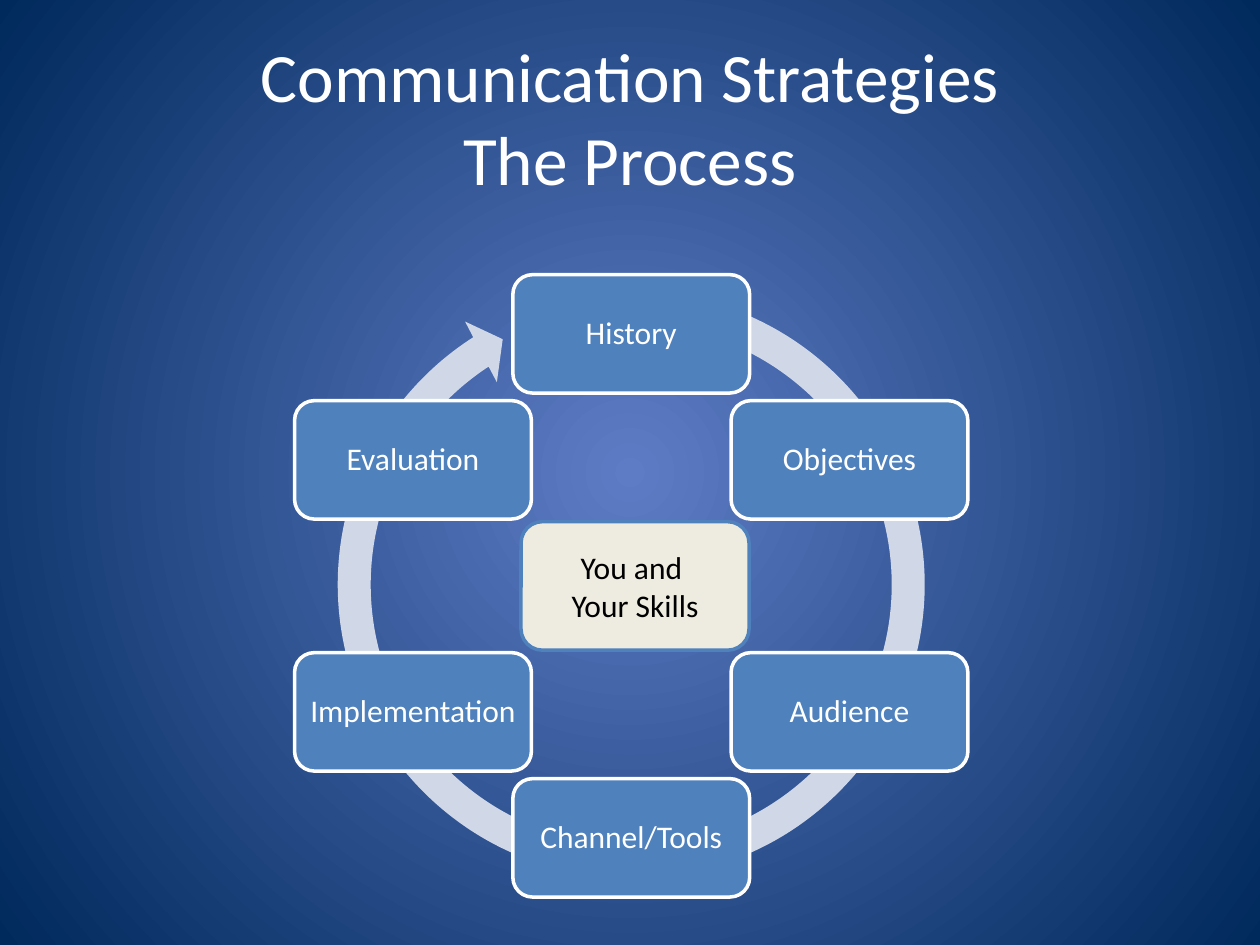
"""Build a slide showing the communication process as a six-step cycle."""
from dataclasses import dataclass
from math import cos, radians, sin
from typing import Optional

from lxml.etree import SubElement
from pptx import Presentation
from pptx.dml.color import RGBColor
from pptx.enum.shapes import MSO_SHAPE
from pptx.enum.text import MSO_ANCHOR, PP_ALIGN
from pptx.oxml.ns import qn
from pptx.slide import Slide
from pptx.text.text import TextFrame
from pptx.util import Inches, Pt

WHITE = RGBColor(0xFF, 0xFF, 0xFF)
BLACK = RGBColor(0x00, 0x00, 0x00)
BLUE = RGBColor(0x4F, 0x81, 0xBD)
CREAM = RGBColor(0xEE, 0xEC, 0xE1)
PALE_BLUE = RGBColor(0xD0, 0xD8, 0xE8)
GLOW = RGBColor(0x5E, 0x7C, 0xC5)
NAVY = RGBColor(0x00, 0x29, 0x5C)

CENTER_X, CENTER_Y = 5.01, 4.65
ORBIT = 2.0
RING_SIZE = 4.94
RING_ADJUSTMENTS = (0.053, 3.126, 142.288, 171.266, 0.055)
STEPS = ("History", "Objectives", "Audience", "Channel/Tools", "Implementation", "Evaluation")


@dataclass(frozen=True)
class Card:
    text: str
    x: float
    y: float
    width: float = 1.88
    height: float = 0.94
    fill: RGBColor = BLUE
    outline: RGBColor = WHITE
    color: RGBColor = WHITE
    inset: Optional[float] = 0.07
    spacing: Optional[float] = 0.9


def write_text(frame: TextFrame, text: str, *, size: float, color: RGBColor,
               inset: Optional[float] = None, spacing: Optional[float] = None) -> None:
    frame.text = text
    frame.word_wrap = True
    frame.vertical_anchor = MSO_ANCHOR.MIDDLE
    if inset is not None:
        frame.margin_left = frame.margin_right = Inches(inset)
        frame.margin_top = frame.margin_bottom = Inches(inset)
    for paragraph in frame.paragraphs:
        paragraph.alignment = PP_ALIGN.CENTER
        paragraph.line_spacing = spacing
        for run in paragraph.runs:
            run.font.name = "Calibri"
            run.font.size = Pt(size)
            run.font.color.rgb = color


def paint_background(slide: Slide) -> None:
    fill = slide.background.fill
    fill.gradient()
    for stop, color in zip(fill.gradient_stops, (GLOW, NAVY)):
        stop.color.rgb = color
    gradient = slide.element.find(f".//{qn('a:gradFill')}")
    gradient.remove(gradient.find(qn("a:lin")))
    circle = SubElement(gradient, qn("a:path"), {"path": "circle"})
    SubElement(circle, qn("a:fillToRect"), dict.fromkeys("ltrb", "50000"))


def add_ring(slide: Slide) -> None:
    ring = slide.shapes.add_shape(
        MSO_SHAPE.CIRCULAR_ARROW,
        Inches(CENTER_X - RING_SIZE / 2), Inches(CENTER_Y - 0.01 - RING_SIZE / 2),
        Inches(RING_SIZE), Inches(RING_SIZE))
    for index, value in enumerate(RING_ADJUSTMENTS):
        ring.adjustments[index] = value
    ring.shadow.inherit = False
    ring.fill.solid()
    ring.fill.fore_color.rgb = PALE_BLUE
    ring.line.fill.background()


def add_card(slide: Slide, card: Card) -> None:
    box = slide.shapes.add_shape(
        MSO_SHAPE.ROUNDED_RECTANGLE,
        Inches(card.x - card.width / 2), Inches(card.y - card.height / 2),
        Inches(card.width), Inches(card.height))
    box.shadow.inherit = False
    box.fill.solid()
    box.fill.fore_color.rgb = card.fill
    box.line.color.rgb = card.outline
    box.line.width = Pt(2)
    write_text(box.text_frame, card.text, size=18, color=card.color,
               inset=card.inset, spacing=card.spacing)


def main() -> None:
    presentation = Presentation()
    presentation.slide_width, presentation.slide_height = Inches(10), Inches(7.5)
    slide = presentation.slides.add_slide(presentation.slide_layouts[5])
    paint_background(slide)

    title = slide.shapes.title
    title.left, title.top = Inches(0.5), Inches(0.3)
    title.width, title.height = Inches(9), Inches(1.25)
    write_text(title.text_frame, "Communication Strategies\vThe Process", size=39.6, color=WHITE)

    add_ring(slide)
    for index, step in enumerate(STEPS):
        angle = radians(index * 360 / len(STEPS))
        add_card(slide, Card(step, CENTER_X + ORBIT * sin(angle), CENTER_Y - ORBIT * cos(angle)))
    add_card(slide, Card("You and \nYour Skills", 5.04, CENTER_Y, 1.81, 1.02,
                         fill=CREAM, outline=BLUE, color=BLACK, inset=None, spacing=None))

    presentation.save("out.pptx")


if __name__ == "__main__":
    main()
